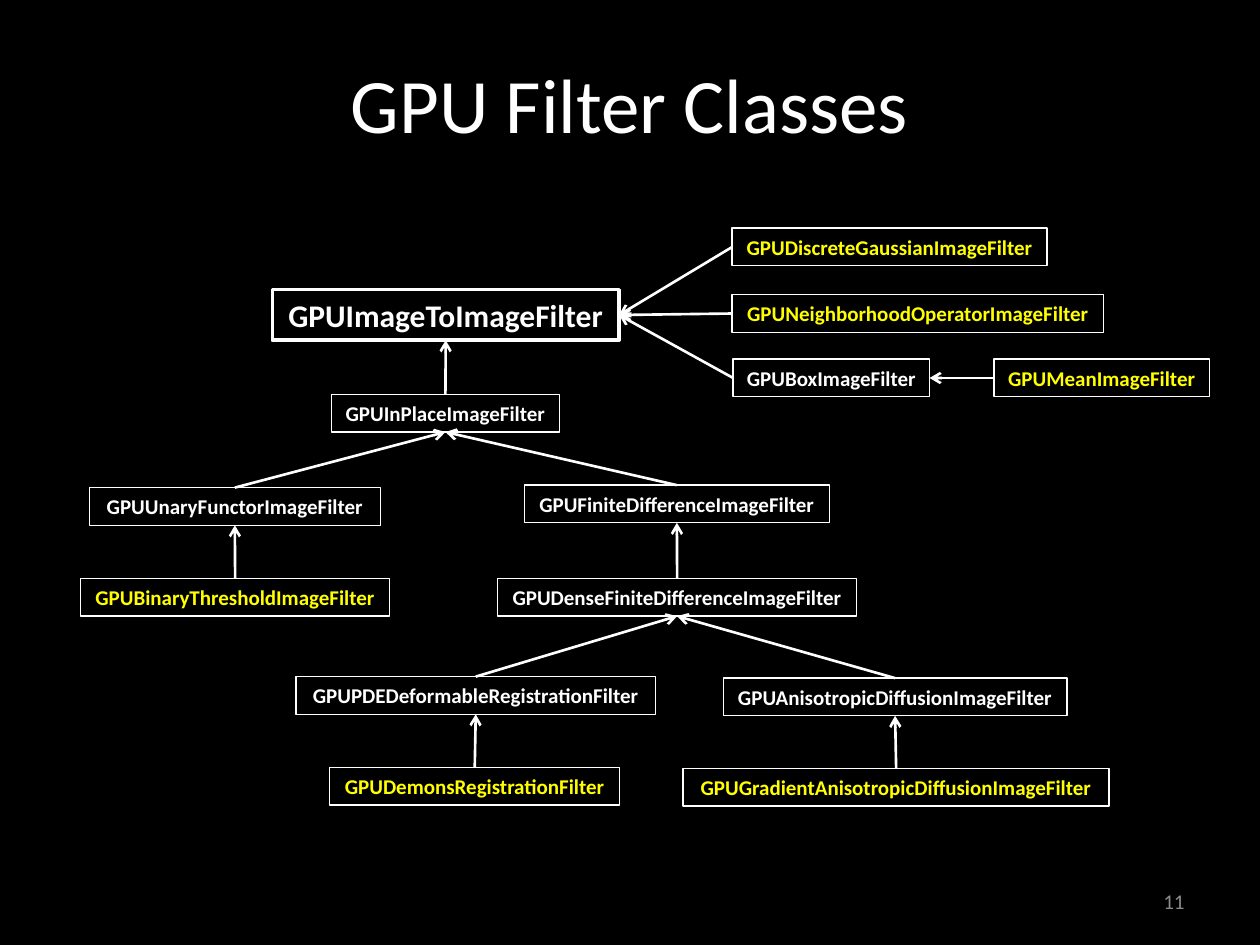
from pptx import Presentation
from pptx.dml.color import RGBColor
from pptx.enum.shapes import MSO_CONNECTOR as Link, MSO_SHAPE as Shape
from pptx.enum.text import MSO_ANCHOR as Anchor, MSO_AUTO_SIZE as Fit, PP_ALIGN as Align
from pptx.oxml.ns import qn
from pptx.util import Cm, Pt
from lxml.etree import SubElement as Sub

WHITE, YELLOW, GREY, BLACK = "FFFFFF", "FFFF00", "8C8C8C", "000000"
TOP, LEFT, BOTTOM, RIGHT = range(4)

NODES = {
    "GPUImageToImageFilter": (3.86, 1.24, 6.99, WHITE),
    "GPUInPlaceImageFilter": (5.05, 3.35, 4.6, WHITE),
    "GPUBoxImageFilter": (13.15, 2.64, 3.96, WHITE),
    "GPUNeighborhoodOperatorImageFilter": (13.13, 1.34, 7.49, YELLOW),
    "GPUDiscreteGaussianImageFilter": (13.13, 0, 6.35, YELLOW),
    "GPUMeanImageFilter": (18.41, 2.64, 4.34, YELLOW),
    "GPUUnaryFunctorImageFilter": (0.17, 5.23, 5.87, WHITE),
    "GPUFiniteDifferenceImageFilter": (8.94, 5.18, 6.15, WHITE),
    "GPUDenseFiniteDifferenceImageFilter": (8.4, 7.06, 7.24, WHITE),
    "GPUAnisotropicDiffusionImageFilter": (12.95, 9.07, 6.93, WHITE),
    "GPUPDEDeformableRegistrationFilter": (4.34, 9.04, 7.24, WHITE),
    "GPUBinaryThresholdImageFilter": (0, 7.06, 6.22, YELLOW),
    "GPUGradientAnisotropicDiffusionImageFilter": (12.14, 10.89, 8.59, YELLOW),
    "GPUDemonsRegistrationFilter": (5.02, 10.87, 5.84, YELLOW),
}
ROOT = "GPUImageToImageFilter"
ASIDE = {
    ROOT: ["GPUDiscreteGaussianImageFilter", "GPUNeighborhoodOperatorImageFilter",
           "GPUBoxImageFilter"],
    "GPUBoxImageFilter": ["GPUMeanImageFilter"],
}
BELOW = {
    ROOT: ["GPUInPlaceImageFilter"],
    "GPUInPlaceImageFilter": ["GPUUnaryFunctorImageFilter", "GPUFiniteDifferenceImageFilter"],
    "GPUUnaryFunctorImageFilter": ["GPUBinaryThresholdImageFilter"],
    "GPUFiniteDifferenceImageFilter": ["GPUDenseFiniteDifferenceImageFilter"],
    "GPUDenseFiniteDifferenceImageFilter": ["GPUPDEDeformableRegistrationFilter",
                                            "GPUAnisotropicDiffusionImageFilter"],
    "GPUPDEDeformableRegistrationFilter": ["GPUDemonsRegistrationFilter"],
    "GPUAnisotropicDiffusionImageFilter": ["GPUGradientAnisotropicDiffusionImageFilter"],
}


def paint(fmt, tone):
    fmt.solid()
    fmt.fore_color.rgb = RGBColor.from_string(tone)


def write(shape, text, size, tone, align, bold=False):
    frame = shape.text_frame
    frame.vertical_anchor = Anchor.MIDDLE
    para = frame.paragraphs[0]
    para.text = text
    para.alignment = align
    font = para.font
    font.name, font.size, font.bold = "Calibri", Pt(size), bold
    paint(font.fill, tone)
    return frame


def label(slide, box, text, size, tone, align):
    shape = slide.shapes.add_textbox(*map(Cm, box))
    write(shape, text, size, tone, align).word_wrap = True


def node(slide, box, text, tone, size, width):
    shape = slide.shapes.add_shape(Shape.RECTANGLE, *map(Cm, box))
    shape.shadow.inherit = False
    shape.fill.background()
    paint(shape.line.fill, WHITE)
    shape.line.width = Pt(width)
    frame = write(shape, text, size, tone, Align.CENTER, True)
    frame.word_wrap = False
    frame.auto_size = Fit.SHAPE_TO_FIT_TEXT
    return shape


def arrow(slide, base, child, start, end):
    link = slide.shapes.add_connector(Link.STRAIGHT, 0, 0, 0, 0)
    link.begin_connect(base, start)
    link.end_connect(child, end)
    paint(link.line.fill, WHITE)
    link.line.width = Pt(1.5)
    props = link._element.spPr
    Sub(props.find(qn("a:ln")), qn("a:headEnd"), type="arrow")
    Sub(props, qn("a:effectLst"))


def tree(slide, left, top):
    shapes = {}
    for name, (x, y, wide, tone) in NODES.items():
        high, size, width = (1.02, 18, 2) if name == ROOT else (0.76, 12, 0.75)
        box = left + x, top + y, wide, high
        shapes[name] = node(slide, box, name, tone, size, width)
    for links, start, end in ((ASIDE, RIGHT, LEFT), (BELOW, BOTTOM, TOP)):
        for base, heirs in links.items():
            for heir in heirs:
                arrow(slide, shapes[base], shapes[heir], start, end)


def main():
    deck = Presentation()
    deck.slide_width, deck.slide_height = Cm(25.4), Cm(19.05)
    slide = deck.slides.add_slide(deck.slide_layouts[6])
    paint(slide.background.fill, BLACK)
    label(slide, (1.27, 0.76, 22.86, 2.62), "GPU Filter Classes", 44, WHITE, Align.CENTER)
    label(slide, (18.21, 17.65, 5.92, 1.02), "11", 12, GREY, Align.RIGHT)
    tree(slide, 1.63, 4.6)
    deck.save("out.pptx")


if __name__ == "__main__":
    main()
